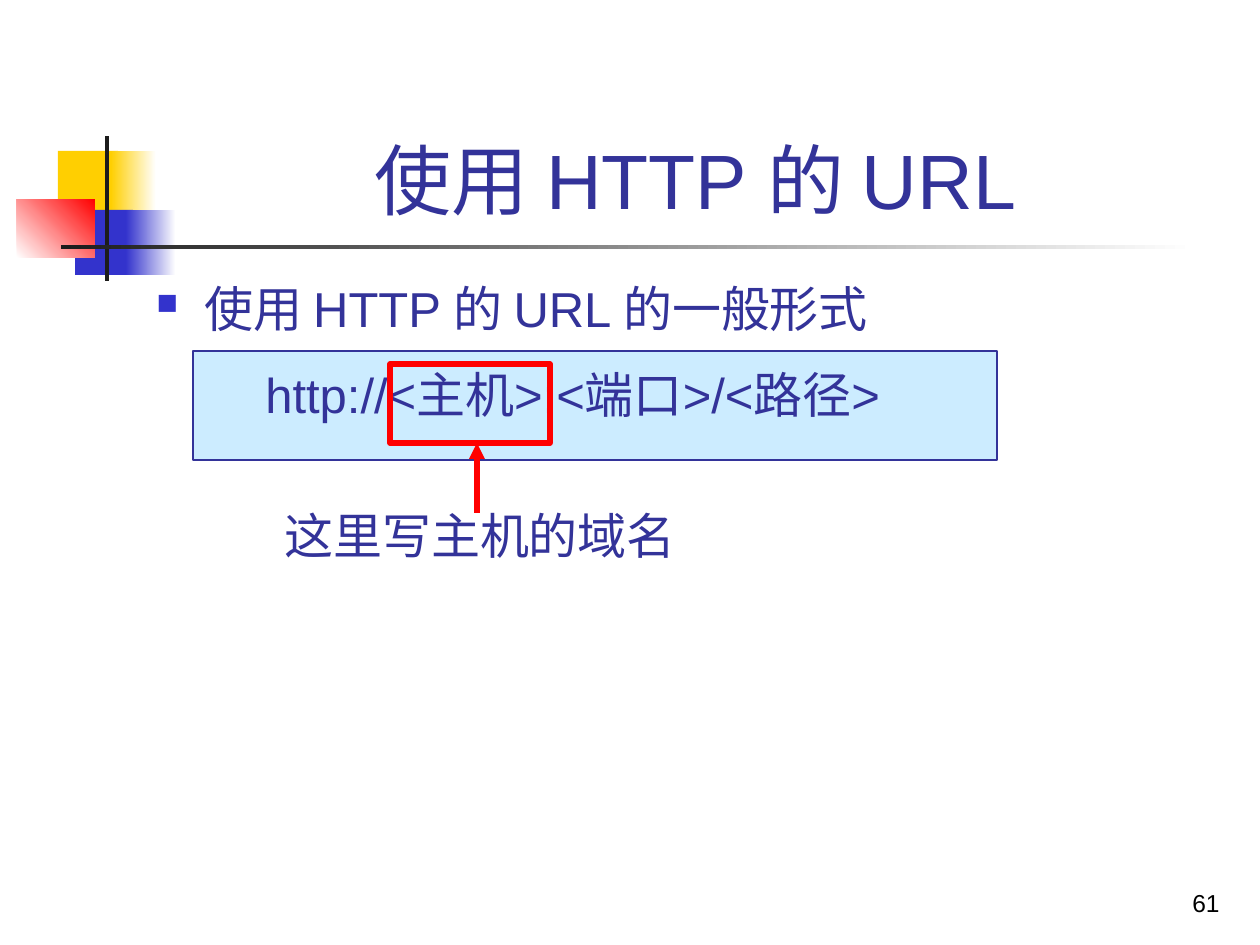
from pptx import Presentation
from pptx.dml.color import RGBColor
from pptx.enum.shapes import MSO_CONNECTOR as Connector, MSO_SHAPE as Shape
from pptx.enum.text import MSO_ANCHOR as Anchor, PP_ALIGN as Align
from pptx.oxml.ns import qn
from pptx.util import Emu, Pt
from lxml.etree import SubElement

COLORS = {
    "yellow": "FFCF01", "blue": "3333CC", "red": "FF0000", "dark": "1C1C1C",
    "white": "FFFFFF", "pale": "CCECFF", "navy": "333399", "black": "000000",
}
SCALE = 914400 / 126


def px(*lengths):
    return [Emu(round(length * SCALE)) for length in lengths]


def add_text(bounds, lines, size, color, font="Arial", align=Align.LEFT, anchor=Anchor.TOP, wrap=True):
    box = page.shapes.add_textbox(*px(*bounds))
    frame = box.text_frame
    frame.word_wrap = wrap
    frame.vertical_anchor = anchor
    frame.text = "\n".join(lines)
    for para in frame.paragraphs:
        para.alignment = align
        para.font.size = Pt(size)
        para.font.name = font
        para.font.color.rgb = RGBColor.from_string(COLORS[color])
    return frame


deck = Presentation()
deck.slide_width, deck.slide_height = px(1260, 945)
page = deck.slides.add_slide(deck.slide_layouts[6])

ornaments = [
    ((58, 151, 60, 66), "yellow", None, 0),
    ((111, 151, 45, 66), "yellow", "white", 0),
    ((75, 210, 58, 65), "blue", None, 0),
    ((126, 210, 50, 65), "blue", "white", 0),
    ((17, 199, 78, 59), "white", "red", 45),
    ((105, 136, 4, 145), "dark", None, 0),
    ((61, 245, 1134, 4), "dark", "white", 0),
]
for bounds, start, end, angle in ornaments:
    block = page.shapes.add_shape(Shape.RECTANGLE, *px(*bounds))
    block.shadow.inherit = False
    block.line.fill.background()
    if end:
        block.fill.gradient()
        block.fill.gradient_angle = angle
        for stop, position, color in zip(block.fill.gradient_stops, (0, 1), (start, end)):
            stop.position = position
            stop.color.rgb = RGBColor.from_string(COLORS[color])
    else:
        block.fill.solid()
        block.fill.fore_color.rgb = RGBColor.from_string(COLORS[start])

url_panel = page.shapes.add_shape(Shape.RECTANGLE, *px(193, 351, 804, 109))
url_panel.shadow.inherit = False
url_panel.fill.solid()
url_panel.fill.fore_color.rgb = RGBColor.from_string(COLORS["pale"])
url_panel.line.color.rgb = RGBColor.from_string(COLORS["navy"])
url_panel.line.width = Pt(0.75)

add_text((159, 29, 1073, 202), ["使用 HTTP 的 URL"], 44, "navy", align=Align.CENTER, anchor=Anchor.BOTTOM)

body = add_text((144, 272, 1071, 189), ["使用 HTTP 的 URL 的一般形式", "http://<主机>:<端口>/<路径>"], 28, "navy")
heading, pattern = body.paragraphs
heading.space_before = Pt(6)
pattern.space_before = Pt(16)
for para, margin, indent in ((heading, 48, -48), (pattern, 109, 0)):
    properties = para._p.get_or_add_pPr()
    for name, length in zip(("marL", "indent"), px(margin, indent)):
        properties.set(name, str(length))
bullet = heading._p.get_or_add_pPr()
default_font = bullet.find(qn("a:defRPr"))
bullet_color = SubElement(bullet, qn("a:buClr"))
SubElement(bullet_color, qn("a:srgbClr"), val=COLORS["blue"])
bullet_size = SubElement(bullet, qn("a:buSzPct"), val="60000")
bullet_mark = SubElement(bullet, qn("a:buChar"), char="■")
for part in (bullet_color, bullet_size, bullet_mark):
    default_font.addprevious(part)

host_frame = page.shapes.add_shape(Shape.RECTANGLE, *px(390, 364, 160, 79))
host_frame.shadow.inherit = False
host_frame.fill.background()
arrow = page.shapes.add_connector(Connector.STRAIGHT, *px(477, 513, 477, 443))
SubElement(arrow._element.spPr, qn("a:effectLst"))
for mark in (host_frame, arrow):
    mark.line.color.rgb = RGBColor.from_string(COLORS["red"])
    mark.line.width = Pt(3)
SubElement(arrow.line._get_or_add_ln(), qn("a:tailEnd"), type="triangle")

add_text((272, 499, 417, 72), ["这里写主机的域名"], 28, "navy", font="Cabin", wrap=False)
add_text((970, 861, 262, 63), ["61"], 14, "black", align=Align.RIGHT, anchor=Anchor.BOTTOM)

deck.save("out.pptx")
